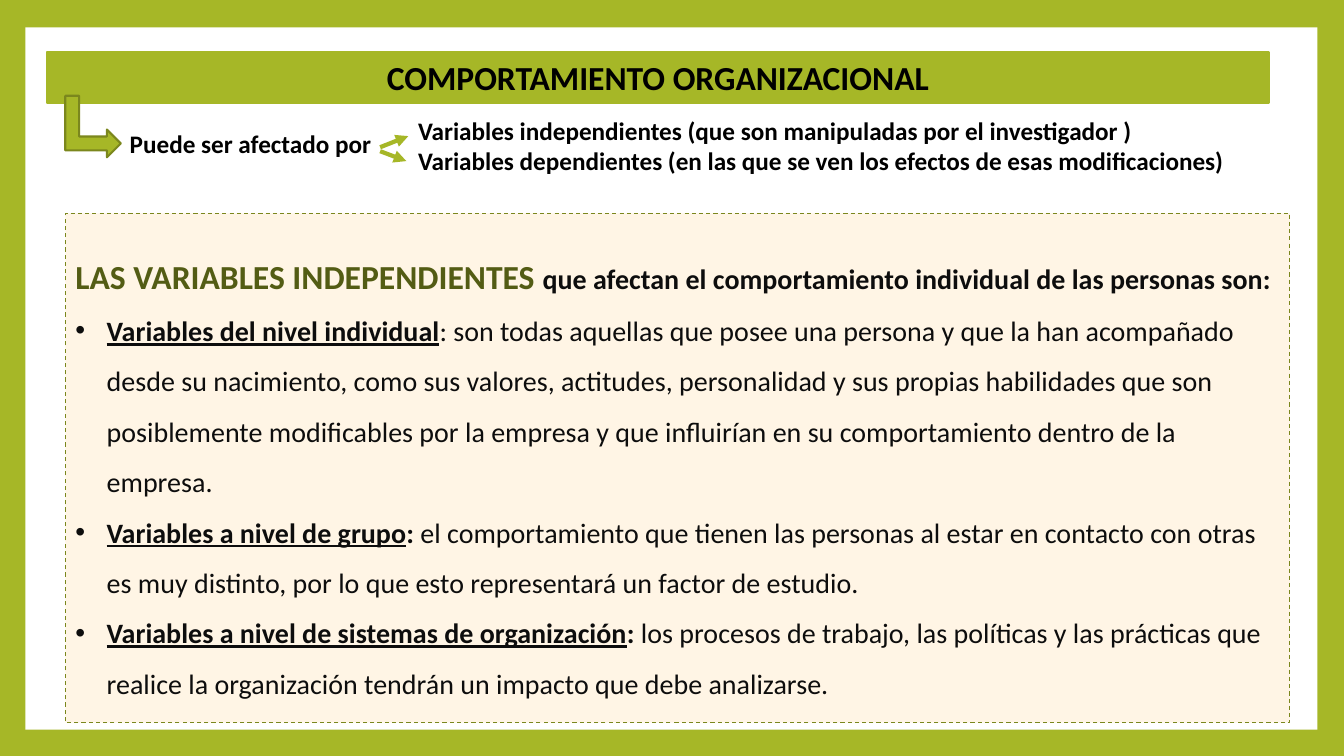
from dataclasses import dataclass
from pptx import Presentation
from pptx.dml.color import RGBColor as RGB
from pptx.enum.dml import MSO_LINE as Dash
from pptx.enum.shapes import MSO_CONNECTOR as Link, MSO_SHAPE as Kind
from pptx.enum.text import MSO_ANCHOR as Anchor, PP_ALIGN as Align
from pptx.oxml.ns import qn
from pptx.util import Cm, Pt
from lxml.etree import SubElement as Sub


@dataclass(frozen=True)
class Theme:
    font: str = "Calibri"
    green: RGB = RGB(0xA6, 0xB7, 0x27)
    edge: RGB = RGB(0x7B, 0x87, 0x1D)
    olive: RGB = RGB(0x53, 0x5C, 0x14)
    cream: RGB = RGB(0xFF, 0xEC, 0xCC)
    white: RGB = RGB(0xFF, 0xFF, 0xFF)
    black: RGB = RGB(0, 0, 0)
    ink: RGB = RGB(0x0D, 0x0D, 0x0D)
    title: Pt = Pt(24)
    body: Pt = Pt(20)
    label: Pt = Pt(18)


theme = Theme()


def block(kind, box, fill, line=None, width=1.5):
    """Add a filled shape, outlined only if a line colour is given."""
    shape = slide.shapes.add_shape(kind, *map(Cm, box))
    shape.shadow.inherit = False
    shape.fill.solid()
    shape.fill.fore_color.rgb = fill
    if line is None:
        shape.line.fill.background()
    else:
        shape.line.color.rgb = line
        shape.line.width = Pt(width)
    return shape


def style(font, size, color, bold=None):
    font.name = theme.font
    font.size = size
    font.color.rgb = color
    font.bold = bold


deck = Presentation()
deck.slide_width, deck.slide_height = Cm(33.87), Cm(19.05)
slide = deck.slides.add_slide(deck.slide_layouts[6])
slide.background.fill.solid()
slide.background.fill.fore_color.rgb = theme.green
block(Kind.RECTANGLE, (0.64, 0.69, 32.56, 17.7), theme.white)

# Title banner and bent arrow
banner = block(Kind.RECTANGLE, (1.19, 1.32, 30.78, 1.27), theme.green, theme.green)
banner.text_frame.vertical_anchor = Anchor.MIDDLE
para = banner.text_frame.paragraphs[0]
para.text = "COMPORTAMIENTO ORGANIZACIONAL"
para.alignment = Align.CENTER
style(para.font, theme.title, theme.black, True)
bent = block(Kind.BENT_UP_ARROW, (1.57, 2.49, 1.55, 1.4), theme.green, theme.edge)
bent.rotation = 90

# Labels, with an arrow to each kind of variable
labels = [
    ((3.02, 3.12, 6.88, 1.04), ["Puede ser afectado por"]),
    ((10.29, 2.77, 21.69, 1.8), [
        "Variables independientes (que son manipuladas por el investigador )",
        "Variables dependientes (en las que se ven los efectos de esas modificaciones)",
    ]),
]
for box, lines in labels:
    frame = slide.shapes.add_textbox(*map(Cm, box)).text_frame
    frame.word_wrap = True
    frame.text = "\n".join(lines)
    for para in frame.paragraphs:
        style(para.font, theme.label, theme.black, True)

for ends in [(9.58, 3.71, 10.29, 3.43), (9.58, 3.81, 10.24, 4.06)]:
    arrow = slide.shapes.add_connector(Link.STRAIGHT, *map(Cm, ends))
    arrow.line.color.rgb = theme.green
    arrow.line.width = Pt(3)
    Sub(arrow.line._get_or_add_ln(), qn("a:tailEnd"), type="triangle")
    Sub(arrow._element.spPr, qn("a:effectLst"))

# Panel of independent variables
panel = block(Kind.RECTANGLE, (1.65, 5.38, 30.86, 12.83), theme.cream, theme.edge, 0.75)
panel.line.dash_style = Dash.DASH
tint = panel._element.spPr.find(qn("a:solidFill"))[0]
Sub(tint, qn("a:alpha"), val="50000")
frame = panel.text_frame
frame.word_wrap = True
frame.vertical_anchor = Anchor.MIDDLE

head = frame.paragraphs[0]
head.alignment = Align.LEFT
head.line_spacing = 1.5
for text, size, color in [
    ("LAS VARIABLES INDEPENDIENTES ", theme.title, theme.olive),
    ("que afectan el comportamiento individual de las personas son:", theme.body, theme.ink),
]:
    run = head.add_run()
    run.text = text
    style(run.font, size, color, True)

levels = [
    ("Variables del nivel individual", False,
     "son todas aquellas que posee una persona y que la han acompañado desde su "
     "nacimiento, como sus valores, actitudes, personalidad y sus propias habilidades "
     "que son posiblemente modificables por la empresa y que influirían en su "
     "comportamiento dentro de la empresa."),
    ("Variables a nivel de grupo", True,
     "el comportamiento que tienen las personas al estar en contacto con otras es muy "
     "distinto, por lo que esto representará un factor de estudio."),
    ("Variables a nivel de sistemas de organización", True,
     "los procesos de trabajo, las políticas y las prácticas que realice la "
     "organización tendrán un impacto que debe analizarse."),
]
for name, strong, text in levels:
    para = frame.add_paragraph()
    para.alignment = Align.LEFT
    para.line_spacing = 1.5
    props = para._p.get_or_add_pPr()
    props.set("marL", str(Cm(0.79)))
    props.set("indent", str(-Cm(0.79)))
    Sub(props, qn("a:buFont"), typeface="Arial")
    Sub(props, qn("a:buChar"), char="•")
    style(para.font, theme.body, theme.ink)
    for part, bold, under in [(name, True, True), (": ", strong, False), (text, False, False)]:
        run = para.add_run()
        run.text = part
        run.font.bold = bold
        run.font.underline = under

deck.save("out.pptx")
